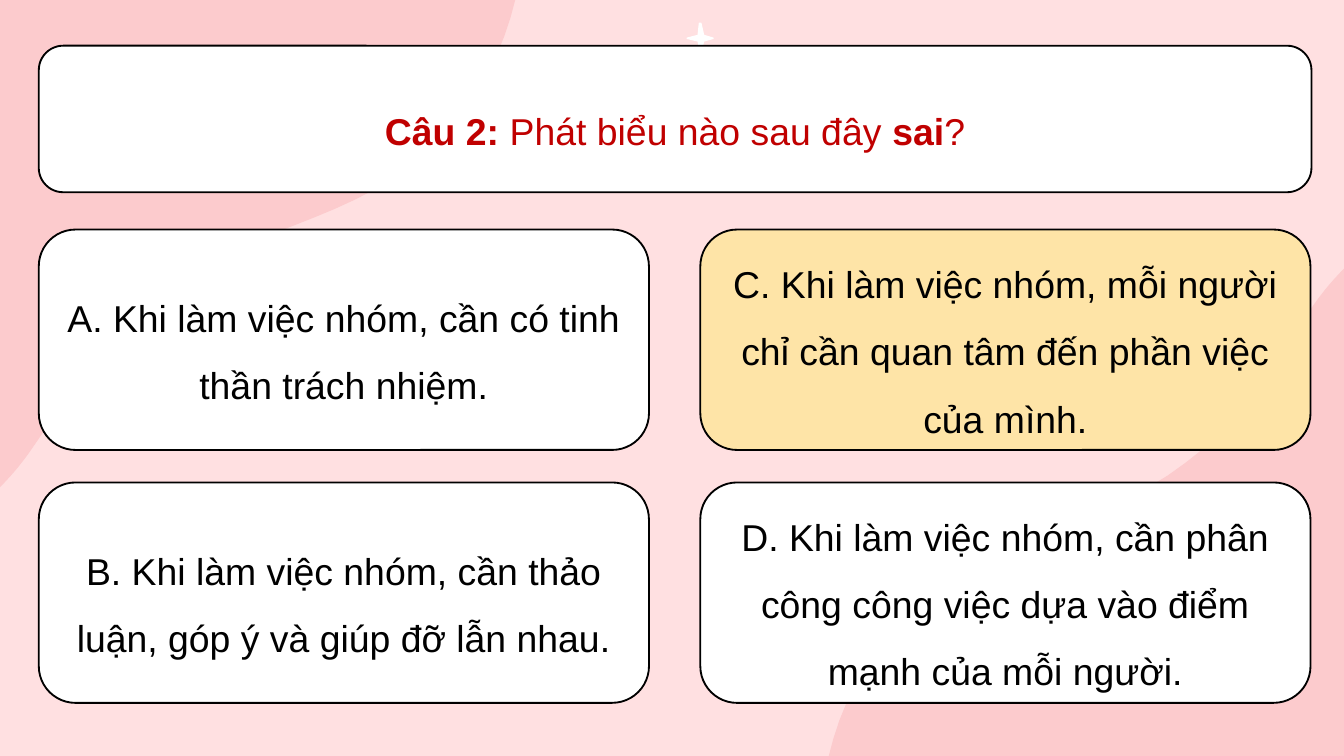
"""Build a quiz slide with one question and four answer cards."""
from pptx import Presentation
from pptx.dml.color import RGBColor as RGB
from pptx.enum.shapes import MSO_SHAPE as SHAPE
from pptx.enum.text import MSO_ANCHOR as ANCHOR, PP_ALIGN as ALIGN
from pptx.util import Pt

WIDE, HIGH = 720, 405
COLORS = {
    "back": "FFE0E1",
    "wave": "FCCBCD",
    "white": "FFFFFF",
    "gold": "FEE4A7",
    "red": "C00000",
    "black": "000000",
}
WAVE = [
    (276, 0), (267, 39), (243, 74), (210, 96), (171, 121), (122, 128), (85, 157),
    (55, 179), (37, 212), (16, 242), (11, 249), (6, 255), (0, 261),
]
SPARK = [
    (375.1, 12.2), (374.4, 12.2), (373.7, 18.7), (367.9, 20.2), (367.9, 20.9),
    (373.7, 22.3), (375.1, 28.8), (375.8, 28.1), (377.3, 22.3), (382.3, 20.9),
    (382.3, 20.2), (377.3, 18.7), (375.8, 12.2),
]
QUERY = [("Câu 2: ", True), ("Phát biểu nào sau đây ", False), ("sai", True), ("?", False)]
CARDS = [
    (0, 0, "A. Khi làm việc nhóm, cần có tinh thần trách nhiệm.", "white"),
    (0, 1, "B. Khi làm việc nhóm, cần thảo luận, góp ý và giúp đỡ lẫn nhau.", "white"),
    (1, 1, "D. Khi làm việc nhóm, cần phân công công việc dựa vào điểm mạnh của mỗi người.",
     "white"),
    (1, 0, "C. Khi làm việc nhóm, mỗi người chỉ cần quan tâm đến phần việc của mình.", "gold"),
]


def color(name):
    return RGB.from_string(COLORS[name])


def paint(shape, fill):
    shape.shadow.inherit = False
    shape.fill.solid()
    shape.fill.fore_color.rgb = color(fill)


def curve(knots, steps=12):
    dots = [knots[0]]
    for i in range(0, len(knots) - 1, 3):
        for step in range(1, steps + 1):
            t = step / steps
            mix = ((1 - t) ** 3, 3 * t * (1 - t) ** 2, 3 * t * t * (1 - t), t ** 3)
            dots.append(tuple(
                sum(m * knot[axis] for m, knot in zip(mix, knots[i:i + 4]))
                for axis in (0, 1)))
    return dots


def add_blob(slide, dots, fill):
    first, *rest = [(Pt(x), Pt(y)) for x, y in dots]
    pen = slide.shapes.build_freeform(*first)
    pen.add_line_segments(rest, close=True)
    blob = pen.convert_to_shape()
    paint(blob, fill)
    blob.line.fill.background()


def add_card(slide, box, parts, fill="white", ink="black"):
    card = slide.shapes.add_shape(SHAPE.ROUNDED_RECTANGLE, *map(Pt, box))
    paint(card, fill)
    card.line.color.rgb = color("black")
    card.line.width = Pt(1)
    frame = card.text_frame
    frame.word_wrap = True
    frame.vertical_anchor = ANCHOR.MIDDLE
    para = frame.paragraphs[0]
    para.alignment = ALIGN.CENTER
    para.line_spacing = 1.5
    para.font.name = "Arial"
    para.font.size = Pt(20)
    para.font.color.rgb = color(ink)
    for text, bold in parts:
        run = para.add_run()
        run.text = text
        run.font.bold = bold


def main():
    deck = Presentation()
    deck.slide_width, deck.slide_height = Pt(WIDE), Pt(HIGH)
    slide = deck.slides.add_slide(deck.slide_layouts[6])
    slide.background.fill.solid()
    slide.background.fill.fore_color.rgb = color("back")

    wave = curve(WAVE) + [(0, 0)]
    add_blob(slide, wave, "wave")
    add_blob(slide, [(WIDE - x, HIGH - y) for x, y in wave], "wave")
    add_blob(slide, SPARK, "white")

    add_card(slide, (20.8, 24.5, 681.8, 78.5), QUERY, ink="red")
    for col, row, text, fill in CARDS:
        box = (20.8 + 354.4 * col, 123 + 135.5 * row, 326.9, 118.1)
        add_card(slide, box, [(text, False)], fill)
    deck.save("out.pptx")


if __name__ == "__main__":
    main()
